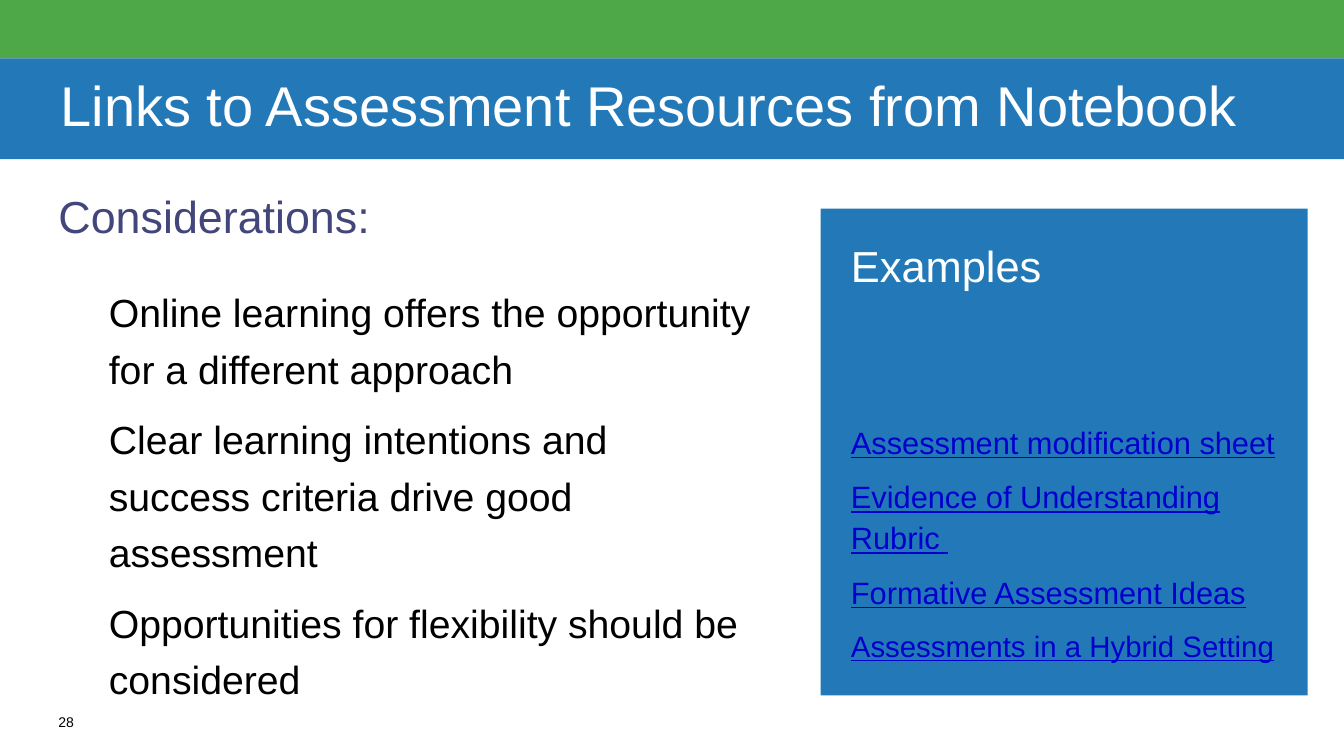
from dataclasses import dataclass

from pptx import Presentation
from pptx.dml.color import RGBColor
from pptx.enum import shapes, text
from pptx.util import Inches, Pt


@dataclass(frozen=True)
class Theme:
    font: str = "Arial"
    green: str = "4EA848"
    blue: str = "2379B8"
    heading: str = "43467B"
    link: str = "0000CC"
    white: str = "FFFFFF"
    black: str = "000000"
    title_size: int = 40
    heading_size: int = 32
    panel_size: int = 31
    body_size: int = 28
    link_size: int = 22
    small_link_size: int = 21
    number_size: int = 10


class SlideBuilder:
    def __init__(self, slide, theme):
        self.slide = slide
        self.theme = theme

    def band(self, box, color):
        band = self.slide.shapes.add_shape(
            shapes.MSO_SHAPE.RECTANGLE, *map(Inches, box))
        band.shadow.inherit = False
        band.fill.solid()
        band.fill.fore_color.rgb = RGBColor.from_string(color)
        band.line.fill.background()
        return band

    def text_box(self, box):
        return self.slide.shapes.add_textbox(*map(Inches, box))

    def add_lines(self, shape, lines, insets=(0, 0, 0, 0),
                  anchor=text.MSO_ANCHOR.TOP):
        """Fill shape with (wording, size, colour, paragraph format, underline)."""
        frame = shape.text_frame
        left, top, right, bottom = map(Inches, insets)
        frame_format = {
            "word_wrap": True, "vertical_anchor": anchor,
            "margin_left": left, "margin_top": top,
            "margin_right": right, "margin_bottom": bottom,
        }
        for name, value in frame_format.items():
            setattr(frame, name, value)
        for index, (wording, size, color, spacing, underline) in enumerate(lines):
            paragraph = frame.add_paragraph() if index else frame.paragraphs[0]
            for name, value in {"alignment": text.PP_ALIGN.LEFT, **spacing}.items():
                setattr(paragraph, name, value)
            run = paragraph.add_run()
            run.text = wording
            font_format = {"name": self.theme.font, "size": Pt(size),
                           "underline": underline}
            for name, value in font_format.items():
                setattr(run.font, name, value)
            run.font.color.rgb = RGBColor.from_string(color)


def main():
    deck = Presentation()
    deck.slide_width, deck.slide_height = Inches(13.33), Inches(7.5)
    theme = Theme()
    builder = SlideBuilder(deck.slides.add_slide(deck.slide_layouts[6]), theme)

    builder.band((0, 0, 13.33, 0.58), theme.green)
    title = builder.band((0, 0.58, 13.33, 1), theme.blue)
    builder.add_lines(
        title,
        [("Links to Assessment Resources from Notebook", theme.title_size,
          theme.white, {"line_spacing": 0.9}, False)],
        insets=(0.6, 0, 0.4, 0), anchor=text.MSO_ANCHOR.MIDDLE)

    heading = builder.text_box((0.58, 1.87, 6.58, 0.54))
    builder.add_lines(heading, [("Considerations:", theme.heading_size,
                                 theme.heading, {}, False)])

    considerations = [
        "Online learning offers the opportunity for a different approach",
        "Clear learning intentions and success criteria drive good assessment",
        "Opportunities for flexibility should be considered",
    ]
    body = builder.text_box((1.08, 2.77, 6.45, 4.2))
    builder.add_lines(body, [
        (wording, theme.body_size, theme.black,
         {"line_spacing": 1.2, "space_before": Pt(10 if index else 0)}, False)
        for index, wording in enumerate(considerations)])

    page_number = builder.text_box((0.58, 7.08, 0.42, 0.25))
    builder.add_lines(page_number,
                      [("28", theme.number_size, theme.black, {}, False)])

    examples = [
        ("Assessment modification sheet", theme.link_size),
        ("Evidence of Understanding Rubric ", theme.link_size),
        ("Formative Assessment Ideas", theme.link_size),
        ("Assessments in a Hybrid Setting", theme.small_link_size),
    ]
    panel = builder.band((8.14, 2.07, 4.83, 4.83), theme.blue)
    panel_lines = [("Examples", theme.panel_size, theme.white, {}, False)]
    panel_lines += [
        (wording, size, theme.link,
         {"line_spacing": 1.1, "space_before": Pt(10 if index else 92)}, True)
        for index, (wording, size) in enumerate(examples)]
    builder.add_lines(panel, panel_lines, insets=(0.3, 0.3, 0.25, 0.3))

    deck.save("out.pptx")


if __name__ == "__main__":
    main()
